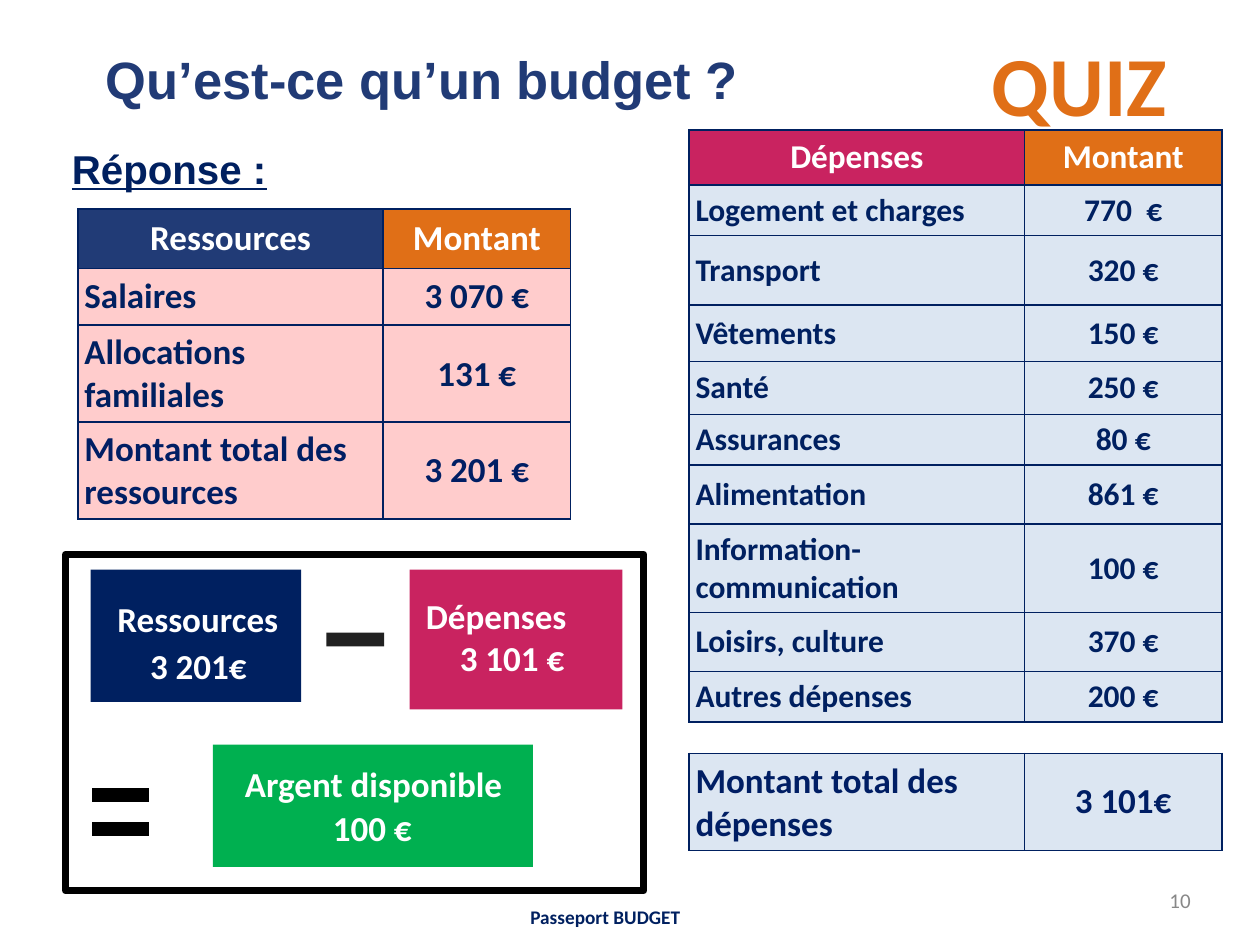
from lxml import etree
from pptx import Presentation
from pptx.dml.color import RGBColor
from pptx.enum.shapes import MSO_SHAPE
from pptx.enum.text import MSO_ANCHOR, PP_ALIGN
from pptx.oxml.ns import qn
from pptx.util import Inches, Pt

RECTANGLE = MSO_SHAPE.RECTANGLE
TOP, MIDDLE = MSO_ANCHOR.TOP, MSO_ANCHOR.MIDDLE
LEFT, CENTER, RIGHT = PP_ALIGN.LEFT, PP_ALIGN.CENTER, PP_ALIGN.RIGHT

NAVY = RGBColor(0x00, 0x20, 0x60)
TOTAL_NAVY = RGBColor(0x00, 0x1E, 0x64)
BLUE = RGBColor(0x21, 0x3B, 0x76)
ORANGE = RGBColor(0xE0, 0x6F, 0x17)
PINK = RGBColor(0xC9, 0x23, 0x60)
GREEN = RGBColor(0x00, 0xB0, 0x50)
ROSE = RGBColor(0xFF, 0xCC, 0xCC)
PALE_BLUE = RGBColor(0xDC, 0xE6, 0xF2)
CHARCOAL = RGBColor(0x21, 0x21, 0x21)
GREY = RGBColor(0x88, 0x88, 0x88)
BLACK = RGBColor(0x00, 0x00, 0x00)
WHITE = RGBColor(0xFF, 0xFF, 0xFF)

MARGIN = Inches(0.05)


def write(frame, text, size=20, color=WHITE, font="Calibri", bold=True,
          underline=None, align=LEFT, before=0):
    paragraph = frame.paragraphs[0]
    paragraph.alignment = align
    paragraph.space_before = Pt(before)
    run = paragraph.add_run()
    run.text = text
    run.font.size = Pt(size)
    run.font.name = font
    run.font.bold = bold
    run.font.underline = underline
    run.font.color.rgb = color


class BudgetSlide:
    def __init__(self, presentation):
        self.slide = presentation.slides.add_slide(presentation.slide_layouts[6])
        self.shapes = self.slide.shapes

    def text(self, content, left, top, width, height, anchor=MIDDLE,
             indent=0, wrap=True, **style):
        box = self.shapes.add_textbox(*map(Inches, (left, top, width, height)))
        frame = box.text_frame
        frame.word_wrap = wrap
        frame.vertical_anchor = anchor
        frame.margin_left = MARGIN + Inches(indent)
        frame.margin_right = frame.margin_top = frame.margin_bottom = MARGIN
        write(frame, content, **style)

    def paint(self, shape, fill=None, line=None, weight=1):
        shape.shadow.inherit = False
        if fill is None:
            shape.fill.background()
        else:
            shape.fill.solid()
            shape.fill.fore_color.rgb = fill
        if line is None:
            shape.line.fill.background()
        else:
            shape.line.color.rgb = line
            shape.line.width = Pt(weight)

    def rectangle(self, left, top, width, height, **paint):
        shape = self.shapes.add_shape(
            RECTANGLE, *map(Inches, (left, top, width, height)))
        self.paint(shape, **paint)

    def equals_sign(self, left, top, width, bar, step):
        builder = None
        for y in (top, top + step):
            corners = [(Inches(x), Inches(v)) for x, v in (
                (left, y), (left + width, y),
                (left + width, y + bar), (left, y + bar))]
            if builder is None:
                builder = self.shapes.build_freeform(*corners[0])
            else:
                builder.move_to(*corners[0])
            builder.add_line_segments(corners[1:], close=True)
        self.paint(builder.convert_to_shape(), fill=BLACK, line=WHITE, weight=2)

    def border(self, cell):
        properties = cell._tc.get_or_add_tcPr()
        for side in ("a:lnL", "a:lnR", "a:lnT", "a:lnB"):
            line = etree.SubElement(properties, qn(side), w=str(Pt(1)))
            fill = etree.SubElement(line, qn("a:solidFill"))
            etree.SubElement(fill, qn("a:srgbClr"), val=str(NAVY))

    def table(self, left, top, widths, heights, rows, fill, header=None,
              size=20, header_size=20, color=NAVY):
        table = self.shapes.add_table(
            len(rows), len(widths), Inches(left), Inches(top),
            Inches(sum(widths)), Inches(sum(heights))).table
        table.first_row = header is not None
        table.horz_banding = False
        for column, width in zip(table.columns, widths):
            column.width = Inches(width)
        for r, (row, height) in enumerate(zip(rows, heights)):
            table.rows[r].height = Inches(height)
            is_header = header is not None and r == 0
            for c, content in enumerate(row):
                cell = table.cell(r, c)
                cell.margin_left = cell.margin_right = MARGIN
                cell.margin_top = cell.margin_bottom = MARGIN
                cell.vertical_anchor = MIDDLE
                self.border(cell)
                cell.fill.solid()
                cell.fill.fore_color.rgb = header[c] if is_header else fill
                write(cell.text_frame, content,
                      size=header_size if is_header else size,
                      color=WHITE if is_header else color,
                      align=CENTER if is_header or c else LEFT)


def main():
    presentation = Presentation()
    presentation.slide_width, presentation.slide_height = Inches(10), Inches(7.5)
    page = BudgetSlide(presentation)

    # Headings
    page.text("QUIZ", 7.82, 0.21, 1.75, 0.91, anchor=TOP, size=48, color=ORANGE)
    page.text("Qu’est-ce qu’un budget ?", 0.67, 0.32, 5.98, 0.61, anchor=TOP,
              indent=0.12, size=30, color=BLUE, font="Arial")
    page.text("Réponse :", 0.52, 1.1, 1.68, 0.46, anchor=TOP, size=23,
              color=NAVY, font="Arial", underline=True, before=5)

    # Expenses and their total
    expense_widths = [2.66, 1.57]
    expenses = [
        ("Dépenses", "Montant"),
        ("Logement et charges", "770  €"),
        ("Transport", "320 €"),
        ("Vêtements", "150 €"),
        ("Santé", "250 €"),
        ("Assurances", "80 €"),
        ("Alimentation", "861 €"),
        ("Information-communication", "100 €"),
        ("Loisirs, culture", "370 €"),
        ("Autres dépenses", "200 €"),
    ]
    page.table(5.47, 1.03, expense_widths,
               [0.44, 0.4, 0.55, 0.45, 0.42, 0.4, 0.47, 0.7, 0.47, 0.4],
               expenses, PALE_BLUE, header=(PINK, ORANGE), size=18, header_size=19)
    page.table(5.47, 5.98, expense_widths, [0.77],
               [("Montant total des dépenses", "3 101€")],
               PALE_BLUE, color=TOTAL_NAVY)

    # Income and its total
    income_widths = [2.42, 1.49]
    income = [
        ("Ressources", "Montant"),
        ("Salaires", "3 070 €"),
        ("Allocations familiales", "131 €"),
    ]
    page.table(0.62, 1.66, income_widths, [0.47, 0.45, 0.78], income, ROSE,
               header=(BLUE, ORANGE))
    page.table(0.62, 3.35, income_widths, [0.77],
               [("Montant total des ressources", "3 201 €")],
               ROSE, color=TOTAL_NAVY)

    # Calculation: income - expenses = money available
    page.rectangle(0.72, 4.52, 1.67, 1.05, fill=NAVY)
    page.rectangle(3.25, 4.52, 1.69, 1.11, fill=PINK)
    page.rectangle(2.59, 5.02, 0.46, 0.11, fill=CHARCOAL)
    page.rectangle(1.69, 5.91, 2.54, 0.97, fill=GREEN)
    page.equals_sign(0.72, 6.24, 0.48, bar=0.14, step=0.27)
    page.rectangle(0.52, 4.4, 4.59, 2.67, line=BLACK, weight=4)

    page.text("Ressources", 0.56, 4.69, 2.02, 0.44, align=CENTER)
    page.text("3 201€", 0.9, 5.06, 1.35, 0.44, align=CENTER)
    page.text("Dépenses", 3.33, 4.67, 1.61, 0.44, anchor=TOP)
    page.text("3 101 €", 3.33, 5, 1.47, 0.44, align=CENTER)
    page.text("Argent disponible", 1.59, 6, 2.75, 0.44, align=CENTER)
    page.text("100 €", 2.28, 6.35, 1.35, 0.44, align=CENTER)

    # Footer
    page.text("Passeport BUDGET", 3.22, 7.13, 3.17, 0.29, size=11, color=NAVY,
              align=CENTER)
    page.text("10", 9.21, 7, 0.29, 0.29, wrap=False, size=12, color=GREY,
              bold=False, align=RIGHT)

    presentation.save("out.pptx")


if __name__ == "__main__":
    main()
